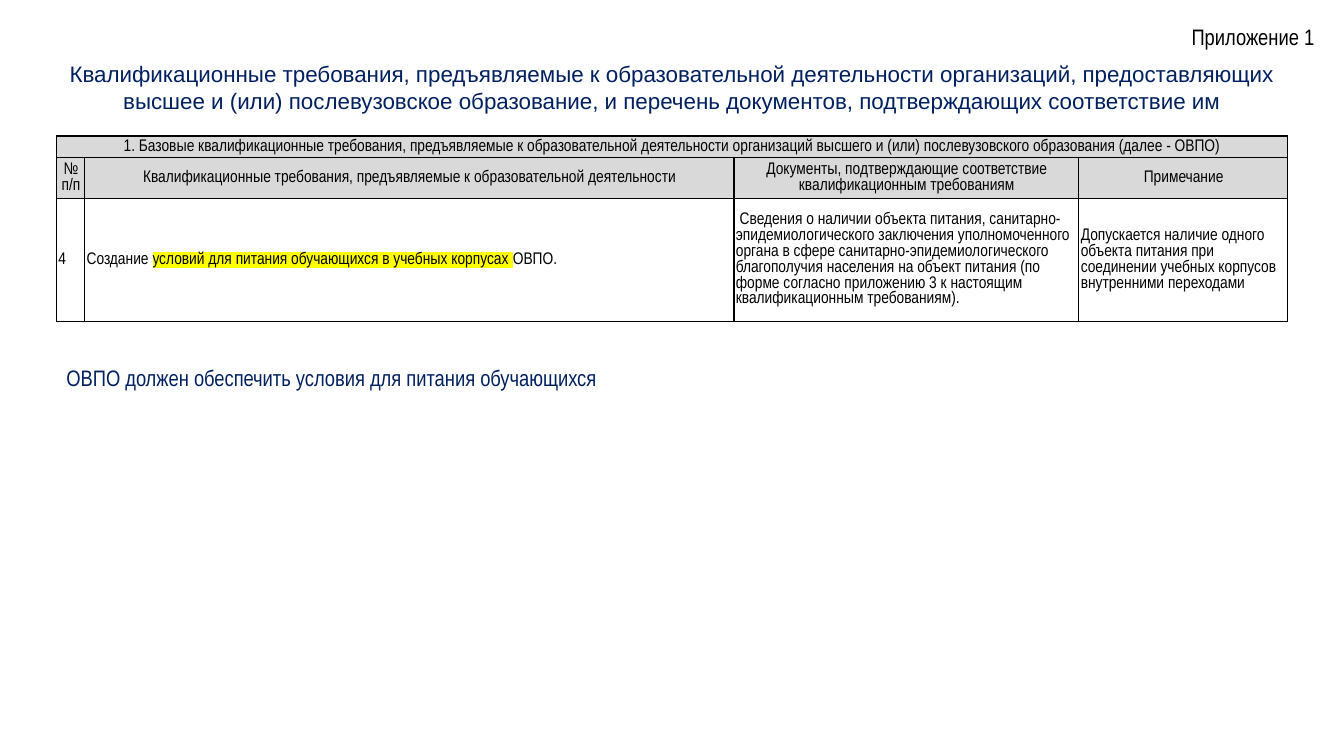
import pptx
import pptx.dml.color
import pptx.enum.text
import pptx.oxml
import pptx.oxml.ns
import pptx.util

WIDE, HIGH = 13.33, 7.5
LEFT, SPAN = 4.2, 91.6
BLACK, NAVY, GREY, YELLOW = "000000", "002060", "D9D9D9", "FFFF00"
NARROW = "Arial Narrow"
ALIGN = pptx.enum.text.PP_ALIGN
ANCHOR = pptx.enum.text.MSO_ANCHOR
FIT = pptx.enum.text.MSO_AUTO_SIZE

TITLE = ("Квалификационные требования, предъявляемые к образовательной деятельности "
         "организаций, предоставляющих высшее и (или) послевузовское образование, "
         "и перечень документов, подтверждающих соответствие им")
BANNER = ("1. Базовые квалификационные требования, предъявляемые к образовательной "
          "деятельности организаций высшего и (или) послевузовского образования (далее - ОВПО)")
HEADS = ["№ п/п",
         "Квалификационные требования, предъявляемые к образовательной деятельности",
         "Документы, подтверждающие соответствие квалификационным требованиям",
         "Примечание"]
NEED = [("Создание ", None),
        ("условий для питания обучающихся в учебных корпусах ", YELLOW),
        ("ОВПО.", None)]
PROOF = (" Сведения о наличии объекта питания, санитарно-эпидемиологического заключения "
         "уполномоченного органа в сфере санитарно-эпидемиологического благополучия "
         "населения на объект питания (по форме согласно приложению 3 к настоящим "
         "квалификационным требованиям).")
NOTE = ("Допускается наличие одного объекта питания при соединении учебных корпусов "
        "внутренними переходами")
COLS = [2.1, 48.31, 25.66, 15.53]
ROWS = [2.8, 5.47, 16.27]


def across(share):
    """Percent of the slide's width."""
    return pptx.util.Inches(WIDE * share / 100)


def down(share):
    """Percent of the slide's height."""
    return pptx.util.Inches(HIGH * share / 100)


def tint(code):
    return pptx.dml.color.RGBColor.from_string(code)


def node(tag, fill, attrs=""):
    """XML element holding one colour, either directly or as a solid fill."""
    space = pptx.oxml.ns.nsdecls("a")
    color = f'<a:srgbClr val="{fill}"/>'
    if tag != "highlight":
        color = f"<a:solidFill>{color}</a:solidFill>"
    return pptx.oxml.parse_xml(f"<a:{tag} {space} {attrs}>{color}</a:{tag}>")


def write(para, text, size, color, face=NARROW, mark=None):
    run = para.add_run()
    run.text = text
    font = run.font
    font.size = pptx.util.Pt(size)
    font.color.rgb = tint(color)
    if mark:
        run._r.get_or_add_rPr().append(node("highlight", mark))
    font.name = face


def label(slide, box, text, color, face=NARROW, align=ALIGN.LEFT, wrap=True):
    left, top, width, height = box
    shape = slide.shapes.add_textbox(across(left), down(top), across(width), down(height))
    frame = shape.text_frame
    frame.word_wrap = wrap
    frame.auto_size = FIT.SHAPE_TO_FIT_TEXT
    para = frame.paragraphs[0]
    para.alignment = align
    write(para, text, 16, color, face)


def frame_cell(cell, fill, inset):
    cell.vertical_anchor = ANCHOR.MIDDLE
    gap = pptx.util.Inches(inset)
    cell.margin_left = cell.margin_right = gap
    cell.margin_top = cell.margin_bottom = gap
    if fill:
        cell.fill.solid()
        cell.fill.fore_color.rgb = tint(fill)
    else:
        cell.fill.background()
    props = cell._tc.get_or_add_tcPr()
    for place, side in enumerate("LRTB"):
        props.insert(place, node(f"ln{side}", BLACK, f'w="{pptx.util.Pt(1)}"'))


def fill_cell(cell, parts, align):
    para = cell.text_frame.paragraphs[0]
    para.alignment = align
    para._p.get_or_add_pPr().set("marL", str(pptx.util.Inches(0.01)))
    for text, mark in parts:
        write(para, text, 12, BLACK, mark=mark)


def grid(slide, top, body):
    shape = slide.shapes.add_table(len(ROWS), len(COLS), across(LEFT), down(top),
                                   across(SPAN), down(sum(ROWS)))
    table = shape.table
    table.horz_banding = table.first_row = False
    for col, share in zip(table.columns, COLS):
        col.width = across(share)
    for row, share in zip(table.rows, ROWS):
        row.height = down(share)
    table.cell(0, 0).merge(table.cell(0, len(COLS) - 1))
    for row, line in enumerate(body):
        head = row < 2
        for cell in table.rows[row].cells:
            frame_cell(cell, GREY if head else None, 0 if head else 0.01)
        for col, parts in enumerate(line):
            fill_cell(table.cell(row, col), parts, ALIGN.CENTER if head else ALIGN.LEFT)


def main():
    deck = pptx.Presentation()
    deck.slide_width, deck.slide_height = across(100), down(100)
    slide = deck.slides.add_slide(deck.slide_layouts[6])
    label(slide, (87.92, 2.4, 11.1, 4.93), "Приложение 1\u00a0".replace("\u00a0", " "),
          BLACK, wrap=False)
    label(slide, (LEFT, 7.33, SPAN, 8.53), TITLE, NAVY, "Arial", ALIGN.CENTER)
    grid(slide, 18, [[[(BANNER, None)]],
                     [[(head, None)] for head in HEADS],
                     [[("4", None)], NEED, [(PROOF, None)], [(NOTE, None)]]])
    label(slide, (LEFT, 47.47, SPAN, 4.93),
          "ОВПО должен обеспечить условия для питания обучающихся", NAVY)
    deck.save("out.pptx")


if __name__ == "__main__":
    main()
